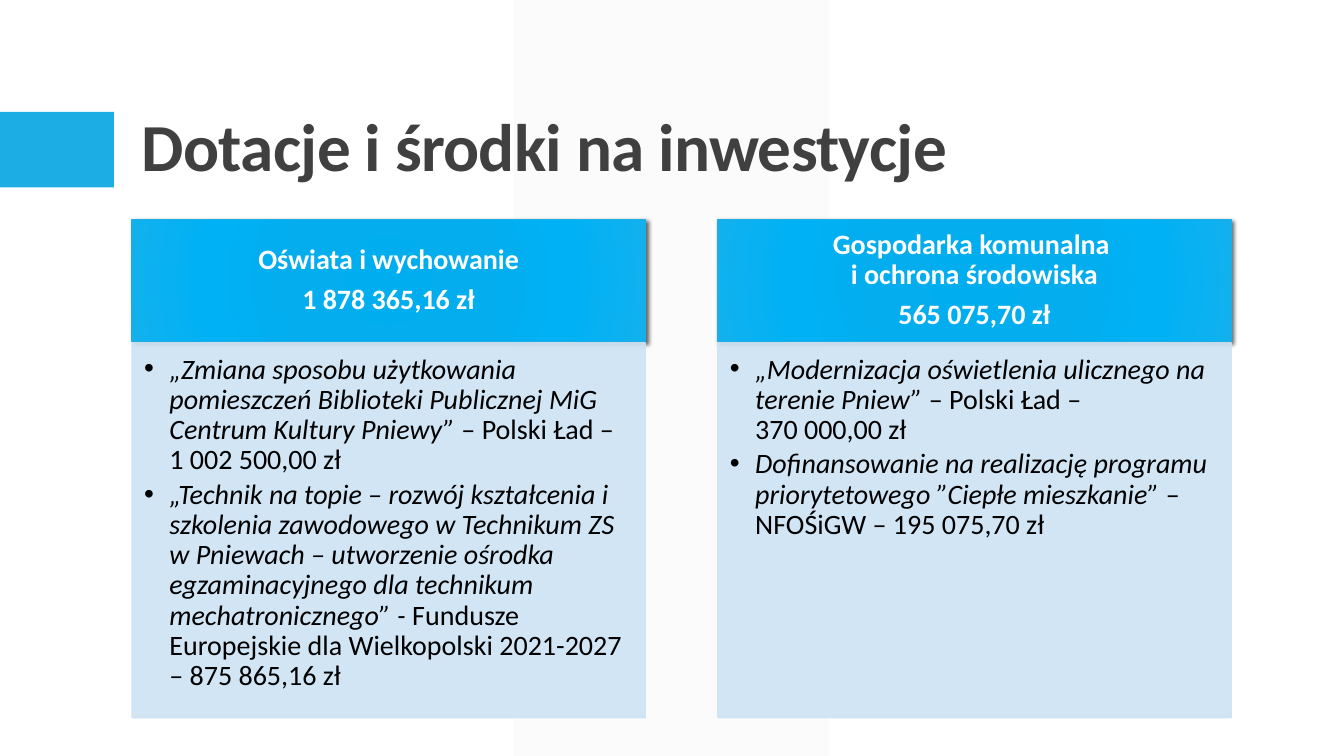
"""Build the slide on grants and funds for investments."""
from lxml.etree import SubElement
from pptx import Presentation
from pptx.dml.color import RGBColor
from pptx.enum.shapes import MSO_SHAPE
from pptx.enum.text import MSO_ANCHOR, PP_ALIGN
from pptx.oxml import parse_xml
from pptx.oxml.ns import nsdecls, qn
from pptx.util import Inches, Pt

TITLE = "Dotacje i środki na inwestycje"
COLUMNS = [
    (["Oświata i wychowanie", "1 878 365,16 zł"],
     [("„Zmiana sposobu użytkowania pomieszczeń Biblioteki Publicznej MiG "
       "Centrum Kultury Pniewy” ",
       "– Polski Ład – \n1 002 500,00 zł"),
      ("„Technik na topie – rozwój kształcenia i szkolenia zawodowego w "
       "Technikum ZS \nw Pniewach – utworzenie ośrodka egzaminacyjnego dla "
       "technikum mechatronicznego” - ",
       "Fundusze Europejskie dla Wielkopolski 2021-2027 – 875 865,16 zł")]),
    (["Gospodarka komunalna \ni ochrona środowiska", "565 075,70 zł"],
     [("„Modernizacja oświetlenia ulicznego na terenie Pniew” ",
       "– Polski Ład – \n370 000,00 zł"),
      ("Dofinansowanie na realizację programu priorytetowego "
       "”Ciepłe mieszkanie” ",
       "– NFOŚiGW – 195 075,70 zł")]),
]

FONT = "Calibri"
WHITE = RGBColor(0xFF, 0xFF, 0xFF)
BLACK = RGBColor(0, 0, 0)
DARK = RGBColor(0x40, 0x40, 0x40)
ACCENT = RGBColor(0x1C, 0xAD, 0xE4)
PALE_BLUE = RGBColor(0xCD, 0xE3, 0xF5)
BAND_GRAY = RGBColor(0xF2, 0xF2, 0xF2)
HEADER_STOPS = [(0, "00ADEF"), (34, "03ADEE"), (70, "00B1F5"), (100, "12B1EE")]

LEFT, COLUMN_STEP, COLUMN_WIDTH = 1.31, 5.81, 5.09
HEADER_TOP, HEADER_HEIGHT = 2.18, 1.21
BODY_TOP, BODY_HEIGHT = 3.4, 3.72


def set_alpha(colored, percent):
    for color in colored.iter(qn("a:srgbClr")):
        SubElement(color, qn("a:alpha"), val=str(percent * 1000))


def add_block(slide, box, color, line=None):
    block = slide.shapes.add_shape(MSO_SHAPE.RECTANGLE, *map(Inches, box))
    block.fill.solid()
    block.fill.fore_color.rgb = color
    if line is None:
        block.line.fill.background()
    else:
        block.line.color.rgb = line
        block.line.width = Pt(1)
    block.shadow.inherit = False
    return block


def set_frame(frame, anchor, insets):
    frame.word_wrap = True
    frame.vertical_anchor = anchor
    (frame.margin_left, frame.margin_top,
     frame.margin_right, frame.margin_bottom) = map(Inches, insets)


def add_text(paragraph, text, italic=None):
    for index, part in enumerate(text.split("\n")):
        if index:
            paragraph.add_line_break()
        run = paragraph.add_run()
        run.text = part
        run.font.italic = italic


def style(paragraph, size, color, bold, after, align=PP_ALIGN.LEFT):
    paragraph.alignment = align
    paragraph.line_spacing = 0.9
    paragraph.space_before = Pt(0)
    paragraph.space_after = Pt(after)
    font = paragraph.font
    font.name, font.size, font.bold = FONT, Pt(size), bold
    font.color.rgb = color


def paragraphs(frame, count):
    return [frame.paragraphs[0]] + [frame.add_paragraph() for _ in range(count - 1)]


def add_header(slide, left, lines):
    header = add_block(slide, (left, HEADER_TOP, COLUMN_WIDTH, HEADER_HEIGHT), ACCENT, ACCENT)
    properties = header._element.spPr
    stops = "".join(f'<a:gs pos="{pos * 1000}"><a:srgbClr val="{color}"/></a:gs>'
                    for pos, color in HEADER_STOPS)
    gradient = parse_xml(
        f'<a:gradFill {nsdecls("a")} rotWithShape="1"><a:gsLst>{stops}</a:gsLst>'
        '<a:path path="circle"><a:fillToRect l="100000" t="100000" r="100000" b="100000"/>'
        '</a:path></a:gradFill>')
    properties.replace(properties.find(qn("a:solidFill")), gradient)
    shadow = SubElement(properties.find(qn("a:effectLst")), qn("a:outerShdw"),
                        blurRad=str(Pt(3)), dist=str(Pt(2)), dir=str(45 * 60000),
                        rotWithShape="0")
    SubElement(shadow, qn("a:srgbClr"), val="000000")
    set_alpha(shadow, 60)
    frame = header.text_frame
    set_frame(frame, MSO_ANCHOR.MIDDLE, (0.16, 0.09, 0.16, 0.09))
    for paragraph, line in zip(paragraphs(frame, len(lines)), lines):
        add_text(paragraph, line)
        style(paragraph, 20, WHITE, True, 7, PP_ALIGN.CENTER)


def add_body(slide, left, projects):
    body = add_block(slide, (left, BODY_TOP, COLUMN_WIDTH, BODY_HEIGHT), PALE_BLUE, PALE_BLUE)
    set_alpha(body._element.spPr, 90)
    frame = body.text_frame
    set_frame(frame, MSO_ANCHOR.TOP, (0.12, 0.12, 0.16, 0.17))
    for paragraph, (project, funding) in zip(paragraphs(frame, len(projects)), projects):
        bullet = paragraph._p.get_or_add_pPr()
        bullet.set("marL", str(Inches(0.25)))
        bullet.set("indent", str(-Inches(0.25)))
        SubElement(bullet, qn("a:buFont"), typeface="Arial")
        SubElement(bullet, qn("a:buChar"), char="•")
        add_text(paragraph, project, True)
        add_text(paragraph, funding, False)
        style(paragraph, 20, BLACK, False, 3)


def main():
    deck = Presentation()
    deck.slide_width, deck.slide_height = Inches(13.33), Inches(7.5)
    slide = deck.slides.add_slide(deck.slide_layouts[6])

    band = add_block(slide, (5.1, 0, 3.12, 7.5), BAND_GRAY)
    set_alpha(band._element.spPr, 30)
    add_block(slide, (0, 1.11, 1.13, 0.75), ACCENT)

    title = slide.shapes.add_textbox(*map(Inches, (LEFT, 0.92, 11, 0.97))).text_frame
    set_frame(title, MSO_ANCHOR.BOTTOM, (0.1, 0.05, 0.1, 0.05))
    heading = title.paragraphs[0]
    add_text(heading, TITLE)
    heading.runs[0]._r.get_or_add_rPr().set("spc", "-50")
    style(heading, 48, DARK, True, 0)

    for index, (header_lines, projects) in enumerate(COLUMNS):
        left = LEFT + index * COLUMN_STEP
        add_header(slide, left, header_lines)
        add_body(slide, left, projects)

    deck.save("out.pptx")


if __name__ == "__main__":
    main()
